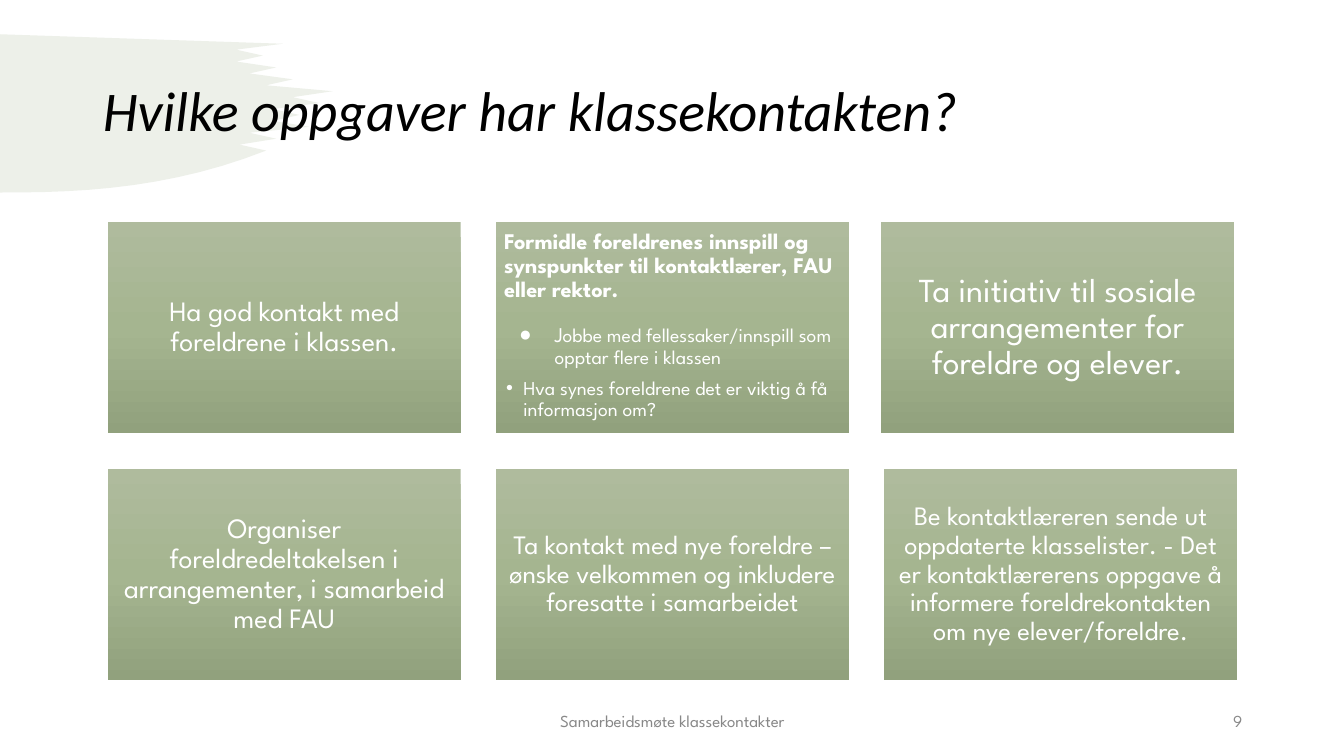
from collections import namedtuple
from copy import deepcopy

from lxml.etree import SubElement
from pptx import Presentation
from pptx.dml.color import RGBColor
from pptx.enum.shapes import MSO_SHAPE
from pptx.enum.text import MSO_ANCHOR, PP_ALIGN
from pptx.oxml.ns import qn
from pptx.util import Inches, Pt

COLORS = {"brush": "EDF0E9", "title": "000000", "footer": "888888", "card_text": "FFFFFF",
          "card_top": "AFBB9D", "card_middle": "A5B590", "card_bottom": "91A17D"}
BODY_FONT = "League Spartan"
TITLE_FONT = "Calibri"
BULLET_FONT = "Arial"
LINE_SPACING = 0.9
COLUMNS = 3
BRISTLE_LENGTHS = (0.85, 0.79, 0.83, 0.88, 1, 0.96, 0.9, 0.93, 0.83, 0.8)

Task = namedtuple("Task", "text size margin shift", defaults=(0.08, 0))
Bullet = namedtuple("Bullet", "character margin hanging space_before level runs")

HEADING = "Formidle foreldrenes innspill og synspunkter til kontaktlærer, FAU eller rektor."
BULLETS = (
    Bullet("●", 0.5, 0.35, 16, 0,
           (("J", 15), ("obbe med fellessaker/innspill som opptar flere i klassen", 14))),
    Bullet("•", 0.19, 0.17, 7, 1,
           (("Hva synes foreldrene det er viktig å få informasjon om?", 14),)))
TASKS = (
    Task("Ha god kontakt med foreldrene i klassen.", 20),
    Task(HEADING, 16),
    Task("Ta initiativ til sosiale arrangementer for foreldre og elever.", 24, 0.1, -0.03),
    Task("Organiser foreldredeltakelsen i arrangementer, i samarbeid med FAU", 20),
    Task("Ta kontakt med nye foreldre – ønske velkommen og inkludere foresatte i samarbeidet", 19),
    Task("Be kontaktlæreren sende ut oppdaterte klasselister. - Det er kontaktlærerens oppgave å "
         "informere foreldrekontakten om nye elever/foreldre.", 19))


def color(name):
    """Return the named colour."""
    return RGBColor.from_string(COLORS[name])


def add_run(paragraph, text, size, color_name, font=BODY_FONT, bold=False, italic=False):
    """Append a formatted run to the paragraph."""
    run = paragraph.add_run()
    run.text = text
    run.font.name, run.font.size = font, Pt(size)
    run.font.bold, run.font.italic = bold, italic
    run.font.color.rgb = color(color_name)


def format_paragraph(paragraph, alignment, space_before=0):
    """Set the alignment and spacing of the paragraph."""
    paragraph.alignment = alignment
    paragraph.line_spacing = LINE_SPACING
    paragraph.space_before = Pt(space_before)


def brush_outline(width, height):
    """Return a stroke with a flat top, ragged right edge and tapering bottom."""
    bristle_step = 0.075 * height
    first_bristle = 0.06 * height
    notch_depth = 0.08 * width
    tips = [width * length for length in BRISTLE_LENGTHS]
    outline = [(0, 0)]
    for index, tip in enumerate(tips):
        tip_top = first_bristle + index * bristle_step
        outline.append((tip, tip_top))
        if index + 1 < len(tips):
            notch = min(tip, tips[index + 1]) - notch_depth
            outline.append((notch, tip_top + bristle_step / 2))
    last_tip, taper_top = outline[-1]
    taper_steps = 12
    for step in range(1, taper_steps + 1):
        remaining = 1 - step / taper_steps
        outline.append((last_tip * remaining, height - (height - taper_top) * remaining ** 2.5))
    return outline


def add_brush(slide, left, top, width, height):
    """Draw the brush stroke in the given box."""
    points = [(Inches(left + x), Inches(top + y)) for x, y in brush_outline(width, height)]
    builder = slide.shapes.build_freeform(*points[0])
    builder.add_line_segments(points[1:])
    brush = builder.convert_to_shape()
    brush.shadow.inherit = False
    brush.fill.solid()
    brush.fill.fore_color.rgb = color("brush")
    brush.line.fill.background()


def add_title(slide, left, top, width, height):
    """Place the title placeholder in front and fill it."""
    title = slide.shapes.title
    slide.shapes._spTree.append(title._element)
    title.left, title.top = Inches(left), Inches(top)
    title.width, title.height = Inches(width), Inches(height)
    title.text_frame.vertical_anchor = MSO_ANCHOR.MIDDLE
    paragraph = title.text_frame.paragraphs[0]
    format_paragraph(paragraph, PP_ALIGN.LEFT)
    add_run(paragraph, "Hvilke oppgaver har klassekontakten?", 40, "title", TITLE_FONT, italic=True)


def add_footer(slide, text, alignment, left, top, width, height):
    """Add one line of footer text."""
    box = slide.shapes.add_textbox(Inches(left), Inches(top), Inches(width), Inches(height))
    box.text_frame.word_wrap = True
    box.text_frame.vertical_anchor = MSO_ANCHOR.MIDDLE
    paragraph = box.text_frame.paragraphs[0]
    paragraph.alignment = alignment
    add_run(paragraph, text, 12, "footer")


def fill_gradient(shape):
    """Fill the shape with the three card colours from top to bottom."""
    shape.fill.gradient()
    shape.fill.gradient_angle = 270
    stop_list = shape._element.spPr.find(qn("a:gradFill")).find(qn("a:gsLst"))
    stop_list.insert(1, deepcopy(stop_list[0]))
    names = ("card_top", "card_middle", "card_bottom")
    for index, (stop, name) in enumerate(zip(shape.fill.gradient_stops, names)):
        stop.color.rgb = color(name)
        stop.position = index / 2


def add_bullet(frame, bullet):
    """Append a bulleted paragraph with a hanging indent."""
    paragraph = frame.add_paragraph()
    paragraph.level = bullet.level
    format_paragraph(paragraph, PP_ALIGN.LEFT, bullet.space_before)
    properties = paragraph._p.get_or_add_pPr()
    properties.set("marL", str(Inches(bullet.margin)))
    properties.set("indent", str(-Inches(bullet.hanging)))
    SubElement(properties, qn("a:buFont")).set("typeface", BULLET_FONT)
    SubElement(properties, qn("a:buChar")).set("char", bullet.character)
    for text, size in bullet.runs:
        add_run(paragraph, text, size, "card_text")


def add_card(slide, task, left, top, width, height):
    """Add a gradient card: a centred statement, or the heading with its bullets."""
    card = slide.shapes.add_shape(
        MSO_SHAPE.RECTANGLE, Inches(left), Inches(top), Inches(width), Inches(height))
    card.shadow.inherit = False
    card.line.fill.background()
    fill_gradient(card)
    frame = card.text_frame
    frame.word_wrap = True
    frame.margin_left = frame.margin_right = Inches(task.margin)
    frame.margin_top = frame.margin_bottom = Inches(task.margin)
    has_bullets = task.text == HEADING
    frame.vertical_anchor = MSO_ANCHOR.TOP if has_bullets else MSO_ANCHOR.MIDDLE
    paragraph = frame.paragraphs[0]
    format_paragraph(paragraph, PP_ALIGN.LEFT if has_bullets else PP_ALIGN.CENTER)
    add_run(paragraph, task.text, task.size, "card_text", bold=has_bullets)
    for bullet in BULLETS if has_bullets else ():
        add_bullet(frame, bullet)


def add_card_grid(slide, left, top, width, height, gap):
    """Lay out the task cards, with equal gaps, in the given box."""
    rows = len(TASKS) // COLUMNS
    card_width = (width - (COLUMNS - 1) * gap) / COLUMNS
    card_height = (height - (rows - 1) * gap) / rows
    for index, task in enumerate(TASKS):
        row, column = divmod(index, COLUMNS)
        card_left = left + column * (card_width + gap) + task.shift
        card_top = top + row * (card_height + gap)
        add_card(slide, task, card_left, card_top, card_width, card_height)


def main():
    """Build and save the presentation."""
    presentation = Presentation()
    presentation.slide_width, presentation.slide_height = Inches(13.33), Inches(7.5)
    slide = presentation.slides.add_slide(presentation.slide_layouts[5])
    add_brush(slide, 0, 0.34, 3.3, 1.57)
    add_title(slide, 0.92, 0.4, 11.5, 1.45)
    add_card_grid(slide, 1.07, 2.2, 11.2, 4.55, 0.35)
    add_footer(slide, "Samarbeidsmøte klassekontakter", PP_ALIGN.CENTER, 4.42, 6.95, 4.5, 0.4)
    add_footer(slide, "9", PP_ALIGN.RIGHT, 9.42, 6.95, 3, 0.4)
    presentation.save("out.pptx")


if __name__ == "__main__":
    main()
